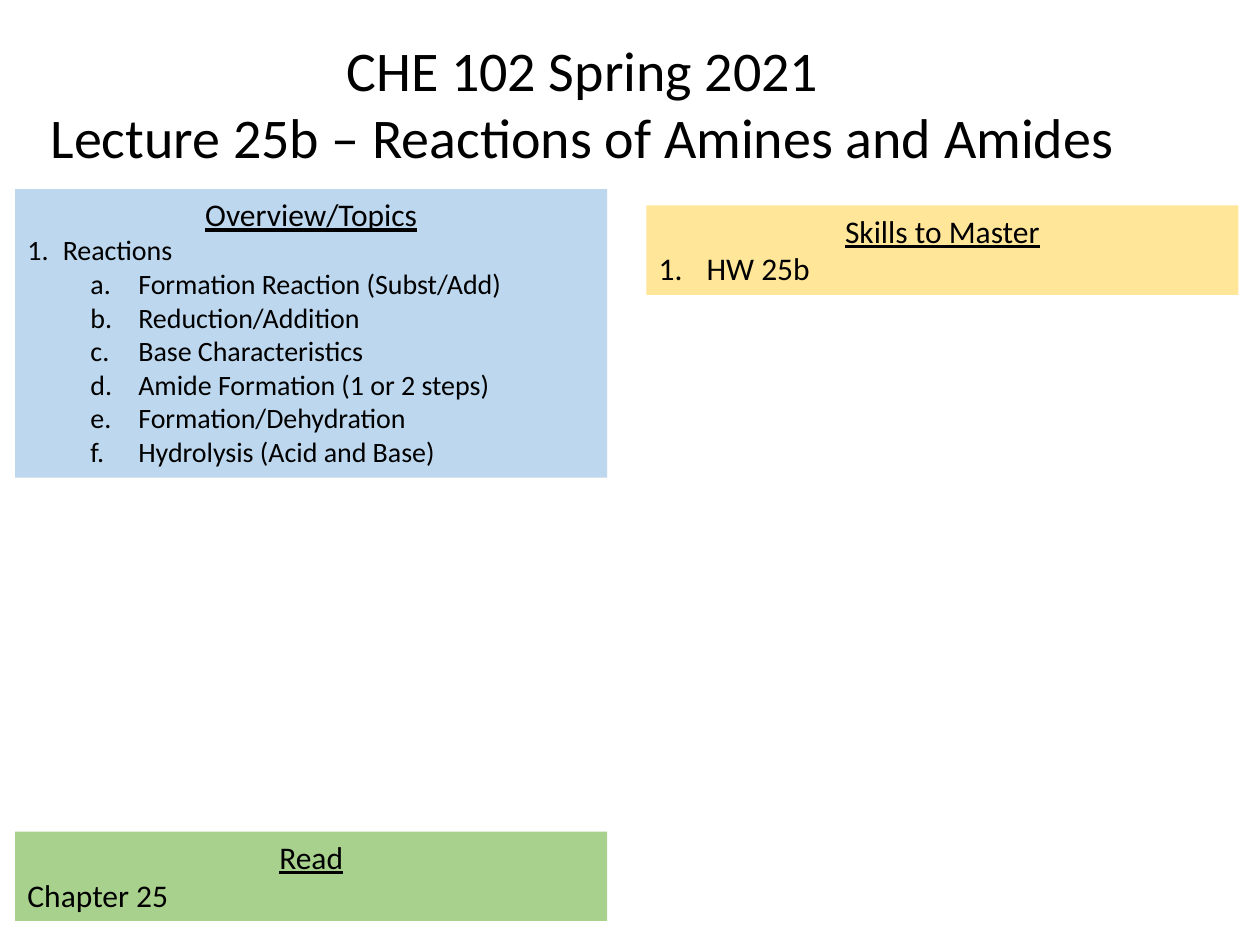
from pptx import Presentation
from pptx.dml.color import RGBColor
from pptx.enum.shapes import MSO_SHAPE
from pptx.enum.text import MSO_ANCHOR, MSO_AUTO_SIZE, PP_ALIGN
from pptx.oxml.ns import qn
from pptx.util import Inches, Pt
from lxml.etree import SubElement

COLORS = {"text": "000000", "blue": "BDD7EE", "yellow": "FFE699", "green": "A9D18E"}
FONT = "Calibri"
TITLE = ["CHE 102 Spring 2021", "Lecture 25b – Reactions of Amines and Amides"]
PANEL_WIDTH = 4.7

STYLES = {
    "plain": dict(level=0, size=18, margin=0, hanging=0, scheme=None),
    "skill": dict(level=0, size=18, margin=0.38, hanging=0.38, scheme="arabicPeriod"),
    "topic": dict(level=0, size=16, margin=0.28, hanging=0.28, scheme="arabicPeriod"),
    "subtopic": dict(level=1, size=16, margin=0.88, hanging=0.38, scheme="alphaLcPeriod"),
}

PANELS = [
    ("Overview/Topics", "blue", 0.12, 1.5, 2.29, [
        ("topic", "Reactions"),
        ("subtopic", "Formation Reaction (Subst/Add)"),
        ("subtopic", "Reduction/Addition"),
        ("subtopic", "Base Characteristics"),
        ("subtopic", "Amide Formation (1 or 2 steps)"),
        ("subtopic", "Formation/Dehydration"),
        ("subtopic", "Hydrolysis (Acid and Base)"),
    ]),
    ("Skills to Master", "yellow", 5.13, 1.63, 0.71, [("skill", "HW 25b")]),
    ("Read", "green", 0.12, 6.6, 0.71, [("plain", "Chapter 25")]),
]


def rgb(name):
    return RGBColor.from_string(COLORS[name])


def add_text(p, text, size, align, underline=None):
    p.alignment = align
    r = p.add_run()
    r.text = text
    r.font.name = FONT
    r.font.size = Pt(size)
    r.font.underline = underline
    r.font.color.rgb = rgb("text")


def number(p, margin, hanging, scheme):
    pPr = p._p.get_or_add_pPr()
    pPr.set("marL", str(Inches(margin)))
    pPr.set("indent", str(-Inches(hanging)))
    SubElement(pPr, qn("a:buFont")).set("typeface", "+mj-lt")
    SubElement(pPr, qn("a:buAutoNum")).set("type", scheme)


def fit(tf, wrap):
    tf.word_wrap = wrap
    tf.auto_size = MSO_AUTO_SIZE.SHAPE_TO_FIT_TEXT
    tf.vertical_anchor = MSO_ANCHOR.TOP


def add_panel(slide, heading, color, left, top, height, items):
    s = slide.shapes.add_shape(MSO_SHAPE.RECTANGLE, Inches(left), Inches(top),
                               Inches(PANEL_WIDTH), Inches(height))
    s.shadow.inherit = False
    s.fill.solid()
    s.fill.fore_color.rgb = rgb(color)
    s.line.fill.background()
    tf = s.text_frame
    fit(tf, True)
    add_text(tf.paragraphs[0], heading, 18, PP_ALIGN.CENTER, True)
    for name, text in items:
        style = STYLES[name]
        p = tf.add_paragraph()
        p.level = style["level"]
        add_text(p, text, style["size"], PP_ALIGN.LEFT)
        if style["scheme"]:
            number(p, style["margin"], style["hanging"], style["scheme"])


def add_title(slide):
    s = slide.shapes.title
    s.left, s.top, s.width, s.height = (Inches(v) for v in (0.26, 0.23, 8.73, 1.18))
    tf = s.text_frame
    fit(tf, False)
    for i, line in enumerate(TITLE):
        p = tf.add_paragraph() if i else tf.paragraphs[0]
        add_text(p, line, 32, PP_ALIGN.CENTER)


def main():
    prs = Presentation()
    prs.slide_width, prs.slide_height = Inches(10), Inches(7.5)
    slide = prs.slides.add_slide(prs.slide_layouts[5])
    for panel in PANELS:
        add_panel(slide, *panel)
    add_title(slide)
    prs.save("out.pptx")


if __name__ == "__main__":
    main()
